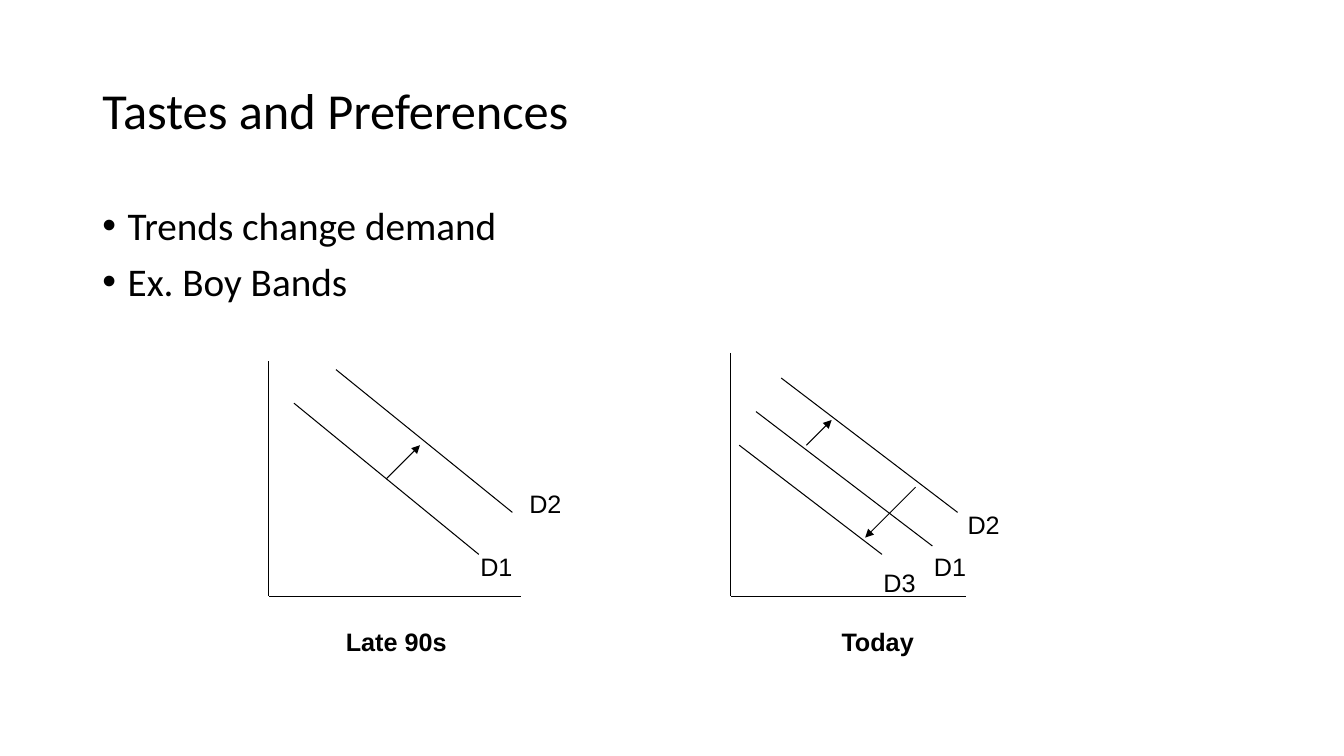
from dataclasses import dataclass

from lxml.etree import SubElement
from pptx import Presentation
from pptx.dml.color import RGBColor
from pptx.enum.shapes import MSO_CONNECTOR
from pptx.enum.text import MSO_ANCHOR, MSO_AUTO_SIZE, PP_ALIGN
from pptx.oxml.ns import qn
from pptx.util import Pt


@dataclass(frozen=True)
class Theme:
    ink: RGBColor = RGBColor(0x00, 0x00, 0x00)
    paper: RGBColor = RGBColor(0xFF, 0xFF, 0xFF)
    text_font: str = "Calibri"
    label_font: str = "Arial"
    title_size: float = 36
    body_size: float = 28
    label_size: float = 18
    line_width: float = 0.75


class SlideBuilder:
    def __init__(self, slide, theme):
        self.slide = slide
        self.theme = theme
        background = slide.background.fill
        background.solid()
        background.fore_color.rgb = theme.paper

    def format_runs(self, paragraph, font, size, bold=False):
        for run in paragraph.runs:
            run.font.name = font
            run.font.size = Pt(size)
            run.font.bold = bold
            run.font.color.rgb = self.theme.ink

    def place(self, placeholder, left, top, width, height):
        placeholder.left, placeholder.top = Pt(left), Pt(top)
        placeholder.width, placeholder.height = Pt(width), Pt(height)
        placeholder.text_frame.auto_size = MSO_AUTO_SIZE.NONE

    def title(self, wording, box):
        heading = self.slide.shapes.title
        self.place(heading, *box)
        heading.text_frame.text = wording
        heading.text_frame.vertical_anchor = MSO_ANCHOR.MIDDLE
        paragraph = heading.text_frame.paragraphs[0]
        paragraph.alignment = PP_ALIGN.LEFT
        paragraph.line_spacing = 0.9
        self.format_runs(paragraph, self.theme.text_font, self.theme.title_size)

    def bullets(self, points, box, indent=18):
        body = self.slide.placeholders[1]
        self.place(body, *box)
        body.text_frame.text = "\n".join(points)
        for paragraph in body.text_frame.paragraphs:
            paragraph.line_spacing = 0.9
            paragraph.space_before = Pt(10)
            properties = paragraph._p.get_or_add_pPr()
            properties.set("marL", str(Pt(indent)))
            properties.set("indent", str(-Pt(indent)))
            SubElement(properties, qn("a:buFont"), typeface=self.theme.label_font)
            SubElement(properties, qn("a:buChar"), char="•")
            self.format_runs(paragraph, self.theme.text_font, self.theme.body_size)

    def line(self, x1, y1, x2, y2, arrow=False):
        connector = self.slide.shapes.add_connector(
            MSO_CONNECTOR.STRAIGHT, Pt(x1), Pt(y1), Pt(x2), Pt(y2))
        connector.line.color.rgb = self.theme.ink
        connector.line.width = Pt(self.theme.line_width)
        if arrow:
            SubElement(connector.line._get_or_add_ln(), qn("a:tailEnd"), type="triangle")
        SubElement(connector._element.spPr, qn("a:effectLst"))

    def label(self, wording, left, top, width=37.5, bold=False):
        label = self.slide.shapes.add_textbox(Pt(left), Pt(top), Pt(width), Pt(29))
        frame = label.text_frame
        frame.word_wrap = False
        frame.auto_size = MSO_AUTO_SIZE.SHAPE_TO_FIT_TEXT
        frame.text = wording
        self.format_runs(frame.paragraphs[0], self.theme.label_font,
                         self.theme.label_size, bold)

    def demand_graph(self, graph):
        left, top, right, bottom = graph["axes"]
        self.line(left, top, left, bottom)
        self.line(left, bottom, right, bottom)
        for curve, ends, label_corner in graph["curves"]:
            self.line(*ends)
            self.label(curve, *label_corner)
        for shift in graph["shifts"]:
            self.line(*shift, arrow=True)
        self.label(*graph["caption"], bold=True)


# Each curve: name, end points, label corner. Caption: wording, left, top, width.
GRAPHS = [
    {
        "axes": (192, 258, 372, 426),
        "curves": [
            ("D1", (210, 288, 342, 396), (336, 390)),
            ("D2", (240, 264, 366, 366), (371, 345)),
        ],
        "shifts": [(276, 342, 300, 318)],
        "caption": ("Late 90s", 240, 444, 86.5),
    },
    {
        "axes": (522, 252, 690, 426),
        "curves": [
            ("D1", (540, 294, 666, 390), (660, 390)),
            ("D2", (558, 270, 684, 366), (684, 360)),
            ("D3", (528, 318, 630, 396), (624, 402)),
        ],
        "shifts": [(576, 318, 594, 300), (654, 348, 618, 384)],
        "caption": ("Today", 594, 444, 67.5),
    },
]


def main():
    presentation = Presentation()
    presentation.slide_width, presentation.slide_height = Pt(960), Pt(540)
    slide = presentation.slides.add_slide(presentation.slide_layouts[1])
    builder = SlideBuilder(slide, Theme())
    builder.title("Tastes and Preferences", (66, 28.75, 828, 104.4))
    builder.bullets(["Trends change demand", "Ex. Boy Bands"], (66, 143.75, 828, 342.6))
    for graph in GRAPHS:
        builder.demand_graph(graph)
    presentation.save("out.pptx")


if __name__ == "__main__":
    main()
